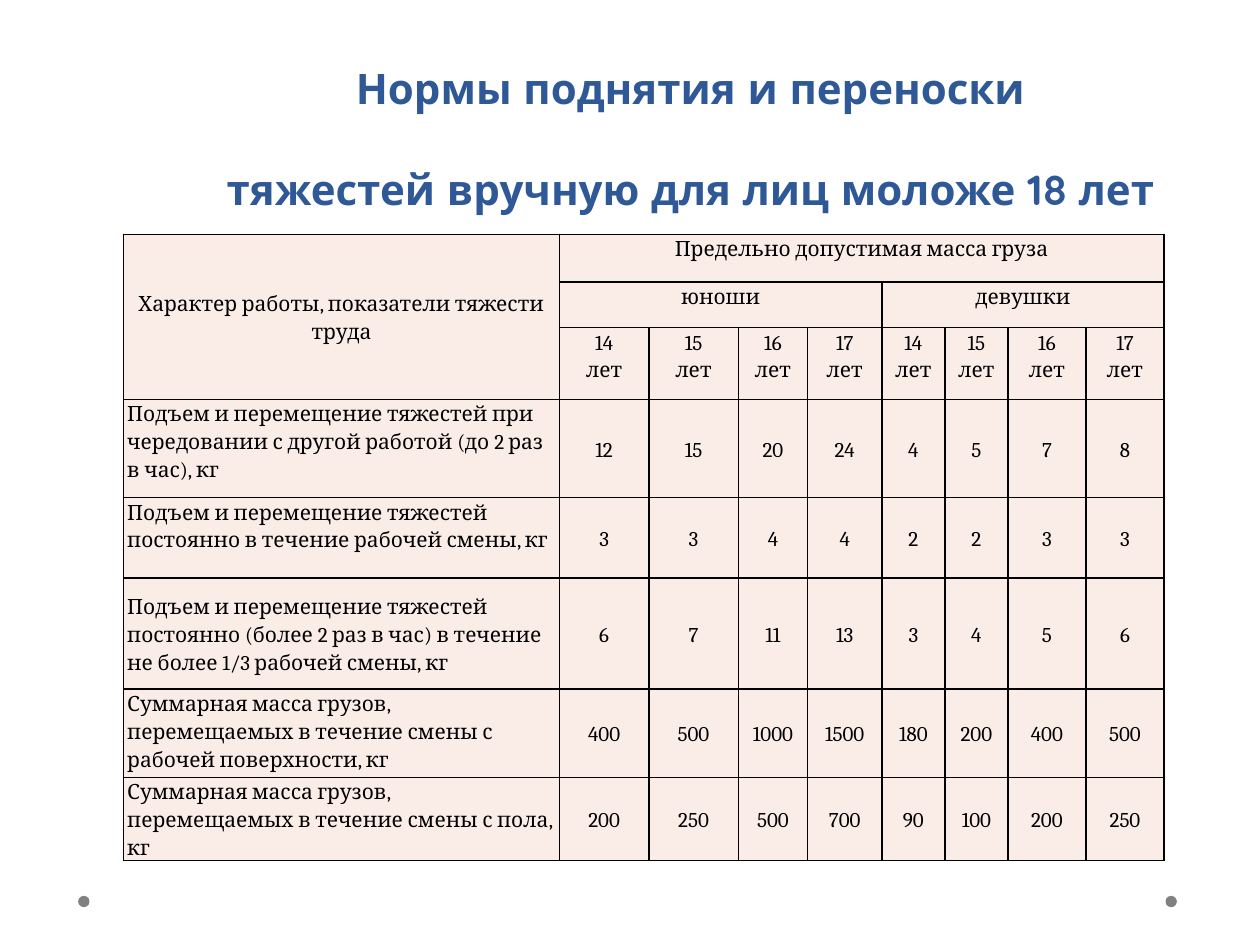
import pptx
import pptx.util
import pptx.dml.color
import pptx.enum.shapes
import pptx.enum.text
import pptx.oxml
from dataclasses import dataclass
from lxml import etree

Inches = pptx.util.Inches
Pt = pptx.util.Pt
Align = pptx.enum.text.PP_ALIGN
Anchor = pptx.enum.text.MSO_ANCHOR
NS = "http://schemas.openxmlformats.org/drawingml/2006/main"


@dataclass(frozen=True)
class Theme:
    title: str = "2F5897"
    text: str = "000000"
    cell: str = "FAEDE8"
    dot: str = "808080"
    head_font: str = "Quicksand"
    body_font: str = "Cambria"
    head_size: int = 24
    body_size: int = 12


THEME = Theme()
COLS = [3.46, 0.71, 0.71, 0.55, 0.59, 0.5, 0.5, 0.62, 0.62]
ROWS = [0.38, 0.36, 0.57, 0.78, 0.64, 0.88, 0.7, 0.57]
AGES = [f"{age}\nлет" for age in range(14, 18)]
NORMS = [
    ("Подъем и перемещение тяжестей при чередовании с другой работой (до 2 раз в час), кг",
     Anchor.TOP, [12, 15, 20, 24, 4, 5, 7, 8]),
    ("Подъем и перемещение тяжестей постоянно в течение рабочей смены, кг",
     Anchor.TOP, [3, 3, 4, 4, 2, 2, 3, 3]),
    ("Подъем и перемещение тяжестей постоянно (более 2 раз в час) в течение не более 1/3 рабочей смены, кг",
     Anchor.MIDDLE, [6, 7, 11, 13, 3, 4, 5, 6]),
    ("Суммарная масса грузов, перемещаемых в течение смены с рабочей поверхности, кг",
     Anchor.TOP, [400, 500, 1000, 1500, 180, 200, 400, 500]),
    ("Суммарная масса грузов, перемещаемых в течение смены с пола, кг",
     Anchor.TOP, [200, 250, 500, 700, 90, 100, 200, 250]),
]


def color(code):
    return pptx.dml.color.RGBColor.from_string(code)


def style(font, name, size, code, bold=False):
    font.name, font.size, font.bold = name, Pt(size), bold
    font.color.rgb = color(code)


def add_title(slide, left, top, width, height):
    title = slide.shapes.title
    title.left, title.top = Inches(left), Inches(top)
    title.width, title.height = Inches(width), Inches(height)
    frame = title.text_frame
    frame.auto_size = pptx.enum.text.MSO_AUTO_SIZE.NONE
    frame.vertical_anchor = Anchor.BOTTOM
    frame.text = "Нормы поднятия и переноски\vтяжестей вручную для лиц моложе 18 лет"
    para = frame.paragraphs[0]
    para.alignment = Align.CENTER
    para.line_spacing = Pt(58)
    style(para.font, THEME.head_font, THEME.head_size, THEME.title, True)


def add_dot(slide, left, top, size):
    dot = slide.shapes.add_shape(
        pptx.enum.shapes.MSO_SHAPE.OVAL,
        Inches(left), Inches(top), Inches(size), Inches(size))
    dot.shadow.inherit = False
    dot.fill.solid()
    dot.fill.fore_color.rgb = color(THEME.dot)
    dot.line.fill.background()


def frame_cell(cell):
    """Give the cell its margins, thin borders and fill."""
    cell.margin_left = cell.margin_right = Inches(0.03)
    cell.margin_top = cell.margin_bottom = 0
    props = cell._tc.get_or_add_tcPr()
    for side in "LRTB":
        line = etree.SubElement(props, f"{{{NS}}}ln{side}", w=str(Pt(1)))
        fill = etree.SubElement(line, f"{{{NS}}}solidFill")
        etree.SubElement(fill, f"{{{NS}}}srgbClr", val=THEME.text)
    cell.fill.solid()
    cell.fill.fore_color.rgb = color(THEME.cell)


def write(cell, text, align=Align.CENTER, anchor=Anchor.TOP):
    cell.text = str(text)
    cell.vertical_anchor = anchor
    for para in cell.text_frame.paragraphs:
        para.alignment = align
        para.line_spacing = 1.15
        style(para.font, THEME.body_font, THEME.body_size, THEME.text)


def add_norms(slide, left, top, width, height):
    table = slide.shapes.add_table(
        len(ROWS), len(COLS),
        Inches(left), Inches(top), Inches(width), Inches(height)).table
    table.first_row = table.horz_banding = False
    for col, size in zip(table.columns, COLS):
        col.width = Inches(size)
    for row, size in zip(table.rows, ROWS):
        row.height = Inches(size)
    for cell in table.iter_cells():
        frame_cell(cell)

    for first, last in [((0, 0), (2, 0)), ((0, 1), (0, 8)),
                        ((1, 1), (1, 4)), ((1, 5), (1, 8))]:
        table.cell(*first).merge(table.cell(*last))
    write(table.cell(0, 0), "Характер работы, показатели тяжести труда",
          anchor=Anchor.MIDDLE)
    write(table.cell(0, 1), "Предельно допустимая масса груза")
    write(table.cell(1, 1), "юноши")
    write(table.cell(1, 5), "девушки")
    for col, age in enumerate(AGES * 2, 1):
        write(table.cell(2, col), age)

    for row, (label, anchor, loads) in enumerate(NORMS, 3):
        write(table.cell(row, 0), label, Align.LEFT, anchor)
        for col, load in enumerate(loads, 1):
            write(table.cell(row, col), load, anchor=Anchor.MIDDLE)


def main():
    deck = pptx.Presentation()
    deck.slide_width, deck.slide_height = Inches(10), Inches(7.5)
    slide = deck.slides.add_slide(deck.slide_layouts[5])
    for left in (9.25, 0.62):
        add_dot(slide, left, 7.11, 0.09)
    add_title(slide, 1.46, 0.52, 8.04, 1.23)
    add_norms(slide, 0.98, 1.86, sum(COLS), sum(ROWS))
    deck.save("out.pptx")


if __name__ == "__main__":
    main()
